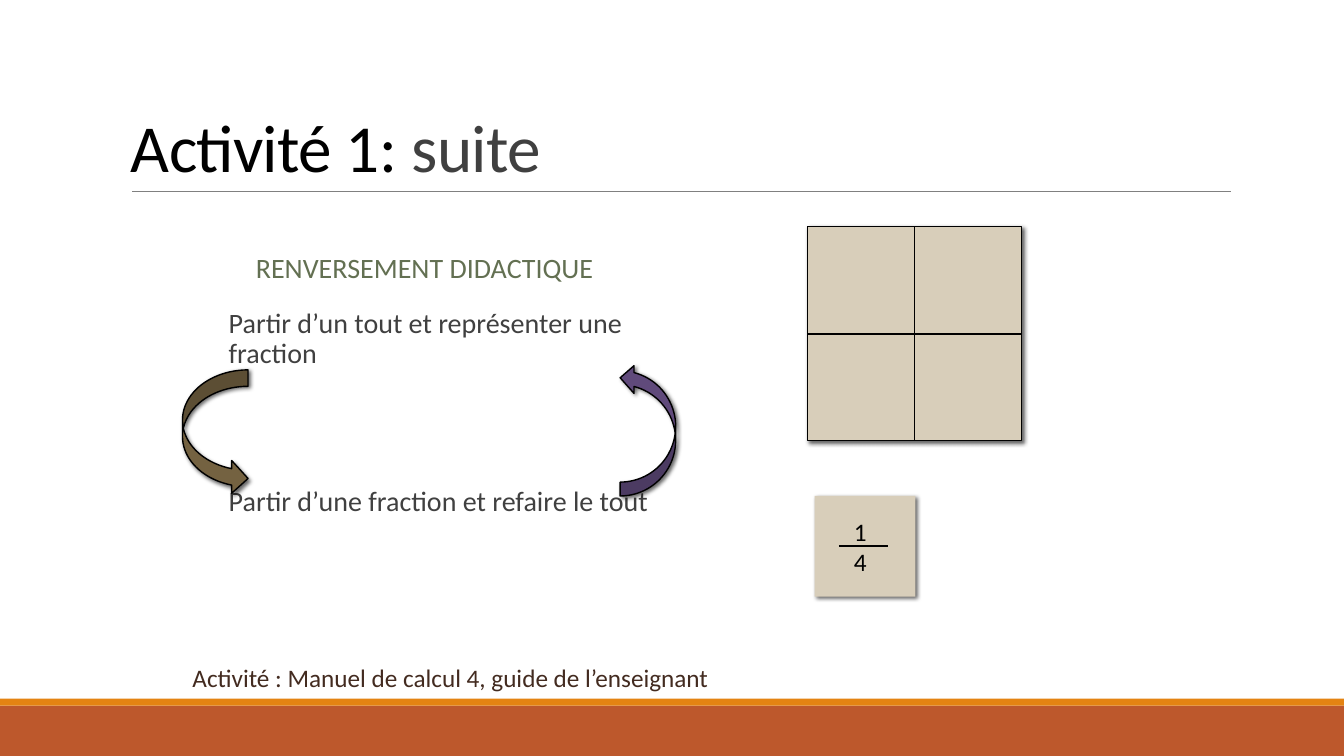
from dataclasses import dataclass

from lxml import etree
from pptx import Presentation
from pptx.dml.color import RGBColor
from pptx.enum.shapes import MSO_CONNECTOR, MSO_SHAPE
from pptx.enum.text import MSO_ANCHOR
from pptx.oxml.ns import qn
from pptx.util import Inches, Pt

RECT = MSO_SHAPE.RECTANGLE
CURVED = MSO_SHAPE.CURVED_RIGHT_ARROW
STRAIGHT = MSO_CONNECTOR.STRAIGHT
TOP, MIDDLE, BOTTOM = MSO_ANCHOR.TOP, MSO_ANCHOR.MIDDLE, MSO_ANCHOR.BOTTOM
WIDTH, HEIGHT = Inches(13.33), Inches(7.5)
FONT = "Calibri"
BLACK, GREY, SAND = "000000", "404040", "D8CEBA"


@dataclass
class Box:
    """Left, top, width and height in percent of the slide."""
    left: float
    top: float
    width: float
    height: float

    def emu(self) -> tuple[int, int, int, int]:
        return (int(WIDTH * self.left / 100), int(HEIGHT * self.top / 100),
                int(WIDTH * self.width / 100), int(HEIGHT * self.height / 100))


@dataclass
class Block:
    box: Box
    fill: str
    outlined: bool = False
    shadow: bool = False
    preset: int = RECT
    rotation: float = 0


@dataclass
class Line:
    box: Box
    color: str = BLACK
    weight: float = 1.25


@dataclass
class Text:
    box: Box
    paragraphs: list[list[tuple[str, str]]]
    size: float
    anchor: int = TOP
    line_spacing: float = 1.0
    gap: float = 0
    tracking: float = 0


def rgb(color: str) -> RGBColor:
    return RGBColor.from_string(color)


def add_shadow(s) -> None:
    effects = s._element.spPr.find(qn("a:effectLst"))
    outer = etree.SubElement(effects, qn("a:outerShdw"), blurRad=str(Pt(3)),
                             dist=str(Pt(2)), dir="2700000", rotWithShape="0")
    color = etree.SubElement(outer, qn("a:srgbClr"), val=BLACK)
    etree.SubElement(color, qn("a:alpha"), val="60000")


def draw_block(slide, block: Block) -> None:
    s = slide.shapes.add_shape(block.preset, *block.box.emu())
    s.rotation = block.rotation
    s.fill.solid()
    s.fill.fore_color.rgb = rgb(block.fill)
    if block.outlined:
        s.line.color.rgb = rgb(BLACK)
        s.line.width = Pt(1)
    else:
        s.line.fill.background()
    s.shadow.inherit = False
    if block.shadow:
        add_shadow(s)


def draw_line(slide, line: Line) -> None:
    x, y, w, h = line.box.emu()
    s = slide.shapes.add_connector(STRAIGHT, x, y, x + w, y + h)
    s.line.color.rgb = rgb(line.color)
    s.line.width = Pt(line.weight)
    etree.SubElement(s._element.spPr, qn("a:effectLst"))


def draw_text(slide, text: Text) -> None:
    tf = slide.shapes.add_textbox(*text.box.emu()).text_frame
    tf.word_wrap = True
    tf.vertical_anchor = text.anchor
    for i, runs in enumerate(text.paragraphs):
        p = tf.paragraphs[0] if i == 0 else tf.add_paragraph()
        p.line_spacing = text.line_spacing
        if i:
            p.space_before = Pt(text.gap)
        p.font.name = FONT
        p.font.size = Pt(text.size)
        for content, color in runs:
            r = p.add_run()
            r.text = content
            r.font.color.rgb = rgb(color)
            if text.tracking:
                r.font._element.set("spc", str(int(text.tracking * 100)))


WHOLE = Box(60.09, 30, 15.9, 28.27)

BANDS = [Block(Box(0, 93.33, 100, 6.67), "BD582C"),
         Block(Box(0, 92.4, 100, 0.93), "E48312")]

TEXTS = [
    Text(Box(9, 4.13, 82.5, 21.2), [[("Activité 1: ", BLACK), ("suite", GREY)]],
         48, BOTTOM, 0.85, tracking=-0.5),
    Text(Box(18.3, 32.93, 33.15, 5.33), [[("RENVERSEMENT DIDACTIQUE", "637052")]],
         20, MIDDLE, 0.9),
    Text(Box(16.28, 40.27, 33.15, 29.33),
         [[("Partir d’un tout et représenter une fraction", GREY)],
          [("Partir d’une fraction et refaire le tout", GREY)]],
         20, line_spacing=0.9, gap=84),
    Text(Box(62.79, 67.6, 6.08, 9.47), [[("1", BLACK)], [("4", BLACK)]], 18),
    Text(Box(13.58, 86.93, 60.84, 5.33),
         [[("Activité : Manuel de calcul 4, guide de l’enseignant", "432B20")]], 18),
]

SQUARES = [Block(WHOLE, SAND, outlined=True, shadow=True),
           Block(Box(60.62, 65.6, 7.5, 13.33), SAND, shadow=True)]

LINES = [
    Line(Box(9.83, 25.33, 81.77, 0), "808080", 0.5),
    Line(Box(WHOLE.left + WHOLE.width / 2, WHOLE.top, 0, WHOLE.height)),
    Line(Box(WHOLE.left, WHOLE.top + WHOLE.height / 2, WHOLE.width, 0)),
    Line(Box(62.42, 72.27, 3.67, 0)),
]

ARROWS = [
    Block(Box(13.58, 48.93, 4.88, 16.53), "746241", True, True, CURVED),
    Block(Box(46.14, 48.13, 4.13, 17.47), "604A7B", True, True, CURVED, 180),
]


def main() -> None:
    prs = Presentation()
    prs.slide_width, prs.slide_height = WIDTH, HEIGHT
    slide = prs.slides.add_slide(prs.slide_layouts[6])
    for block in BANDS + SQUARES:
        draw_block(slide, block)
    for line in LINES:
        draw_line(slide, line)
    for text in TEXTS:
        draw_text(slide, text)
    for arrow in ARROWS:
        draw_block(slide, arrow)
    prs.save("out.pptx")


if __name__ == "__main__":
    main()
